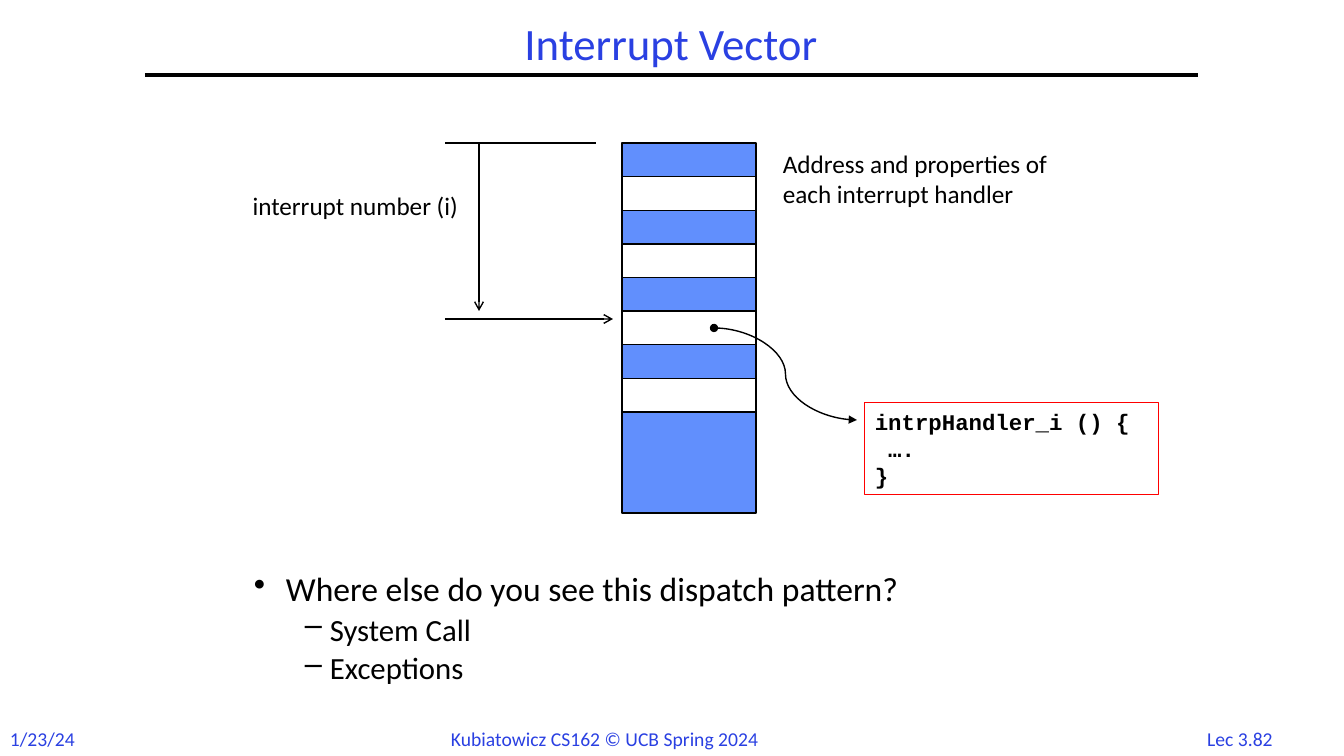
"""Build the Interrupt Vector slide."""
from lxml import etree
from pptx import Presentation
from pptx.dml.color import RGBColor
from pptx.enum.shapes import MSO_CONNECTOR, MSO_SHAPE
from pptx.enum.text import MSO_ANCHOR, MSO_AUTO_SIZE, PP_ALIGN
from pptx.oxml.ns import qn
from pptx.util import Pt

LEFT, CENTER, RIGHT = PP_ALIGN.LEFT, PP_ALIGN.CENTER, PP_ALIGN.RIGHT
TOP, MIDDLE = MSO_ANCHOR.TOP, MSO_ANCHOR.MIDDLE
NO_FIT = MSO_AUTO_SIZE.NONE
RECT = MSO_SHAPE.RECTANGLE
STRAIGHT, CURVE = MSO_CONNECTOR.STRAIGHT, MSO_CONNECTOR.CURVE

EMU_PER_PX = 914400 / 100.8
BLACK, WHITE, RED = "000000", "FFFFFF", "FF0000"
TITLE_BLUE, SLOT_BLUE = "2A40E2", "618FFD"

TITLE = ("Interrupt Vector", (145, 17, 1052, 58))
FOOTERS = [
    ("1/23/24", (0, 722, 86, 34), LEFT),
    ("Kubiatowicz CS162 © UCB Spring 2024", (441, 722, 371, 34), LEFT),
    ("Lec 3.82", (1191, 722, 98, 34), CENTER),
]
LABELS = [
    ("interrupt number (i)", (184, 185, 284, 40), RIGHT),
    ("Address and properties of each interrupt handler",
     (773, 143, 302, 72), LEFT),
]
HANDLER = ("intrpHandler_i () {\n ….\n}", (865, 403, 294, 92))
VECTOR = (622, 143, 134, 370)
SLOT_COUNT = 11
WHITE_SLOTS = (1, 3, 5, 7)
LINES = [
    (STRAIGHT, (145, 75, 1198, 75), 3, None, None),
    (STRAIGHT, (596, 143, 445, 143), 1, None, None),
    (STRAIGHT, (479, 143, 479, 311), 1, None, "arrow"),
    (STRAIGHT, (445, 319, 613, 319), 1, None, "arrow"),
    (CURVE, (714, 328, 857, 420), 1, "oval", "triangle"),
]
BULLETS_BOX = (244, 571, 840, 126)
BULLETS = [
    ("Where else do you see this dispatch pattern?", 0),
    ("System Call", 1),
    ("Exceptions", 1),
]
BULLET_LEVELS = [("•", 24, 32, 32), ("–", 22, 76, 25)]


def px(n):
    return round(n * EMU_PER_PX)


def rgb(value):
    return RGBColor.from_string(value)


def put_text(tf, text, size=18, color=BLACK, font="Calibri", bold=False,
             align=LEFT, anchor=TOP, wrap=True, spacing=None):
    tf.word_wrap, tf.auto_size, tf.vertical_anchor = wrap, NO_FIT, anchor
    for i, line in enumerate(text.split("\n")):
        p = tf.paragraphs[0] if i == 0 else tf.add_paragraph()
        p.alignment = align
        if spacing:
            p.line_spacing = spacing
        r = p.add_run()
        r.text = line
        r.font.size, r.font.name, r.font.bold = Pt(size), font, bold
        r.font.color.rgb = rgb(color)


def add_text(s, text, box, **fmt):
    sp = s.shapes.add_textbox(*map(px, box))
    put_text(sp.text_frame, text, **fmt)
    return sp


def add_rect(s, box, fill=None, line=BLACK, width=1):
    sp = s.shapes.add_shape(RECT, *map(px, box))
    sp.shadow.inherit = False
    if fill:
        sp.fill.solid()
        sp.fill.fore_color.rgb = rgb(fill)
    else:
        sp.fill.background()
    sp.line.color.rgb = rgb(line)
    sp.line.width = Pt(width)
    return sp


def add_line(s, kind, ends, width, head, tail):
    c = s.shapes.add_connector(kind, *map(px, ends))
    c.line.color.rgb = rgb(BLACK)
    c.line.width = Pt(width)
    ln = c.line._get_or_add_ln()
    for tag, arrow in (("a:headEnd", head), ("a:tailEnd", tail)):
        if arrow:
            etree.SubElement(ln, qn(tag), type=arrow)
    etree.SubElement(c._element.spPr, qn("a:effectLst"))


def add_bullets(s):
    text = "\n".join(line for line, _ in BULLETS)
    sp = add_text(s, text, BULLETS_BOX, spacing=0.8)
    for i, (p, (_, level)) in enumerate(zip(sp.text_frame.paragraphs, BULLETS)):
        char, size, margin, hang = BULLET_LEVELS[level]
        p.level = level
        p.space_before = Pt(0.3 * size if i else 0)
        pPr = p._p.get_or_add_pPr()
        pPr.set("marL", str(px(margin)))
        pPr.set("indent", str(-px(hang)))
        etree.SubElement(pPr, qn("a:buChar"), char=char)
        p.runs[0].font.size = Pt(size)


def add_vector(s):
    left, top, width, height = VECTOR
    slot = height / SLOT_COUNT
    add_rect(s, VECTOR, SLOT_BLUE)
    for i in WHITE_SLOTS:
        add_rect(s, (left, top + i * slot, width, slot), WHITE)


def main():
    prs = Presentation()
    prs.slide_width, prs.slide_height = px(1344), px(756)
    s = prs.slides.add_slide(prs.slide_layouts[5])
    text, box = TITLE
    title = s.shapes.title
    title.left, title.top, title.width, title.height = map(px, box)
    put_text(title.text_frame, text, size=32, color=TITLE_BLUE,
             align=CENTER, anchor=MIDDLE, spacing=0.9)
    for text, box, align in FOOTERS:
        add_text(s, text, box, size=14, color=TITLE_BLUE, align=align, wrap=False)
    add_bullets(s)
    add_vector(s)
    for line in LINES:
        add_line(s, *line)
    for text, box, align in LABELS:
        add_text(s, text, box, align=align)
    text, box = HANDLER
    sp = add_rect(s, box, line=RED, width=0.75)
    put_text(sp.text_frame, text, size=16, font="Courier New", bold=True)
    prs.save("out.pptx")


if __name__ == "__main__":
    main()
